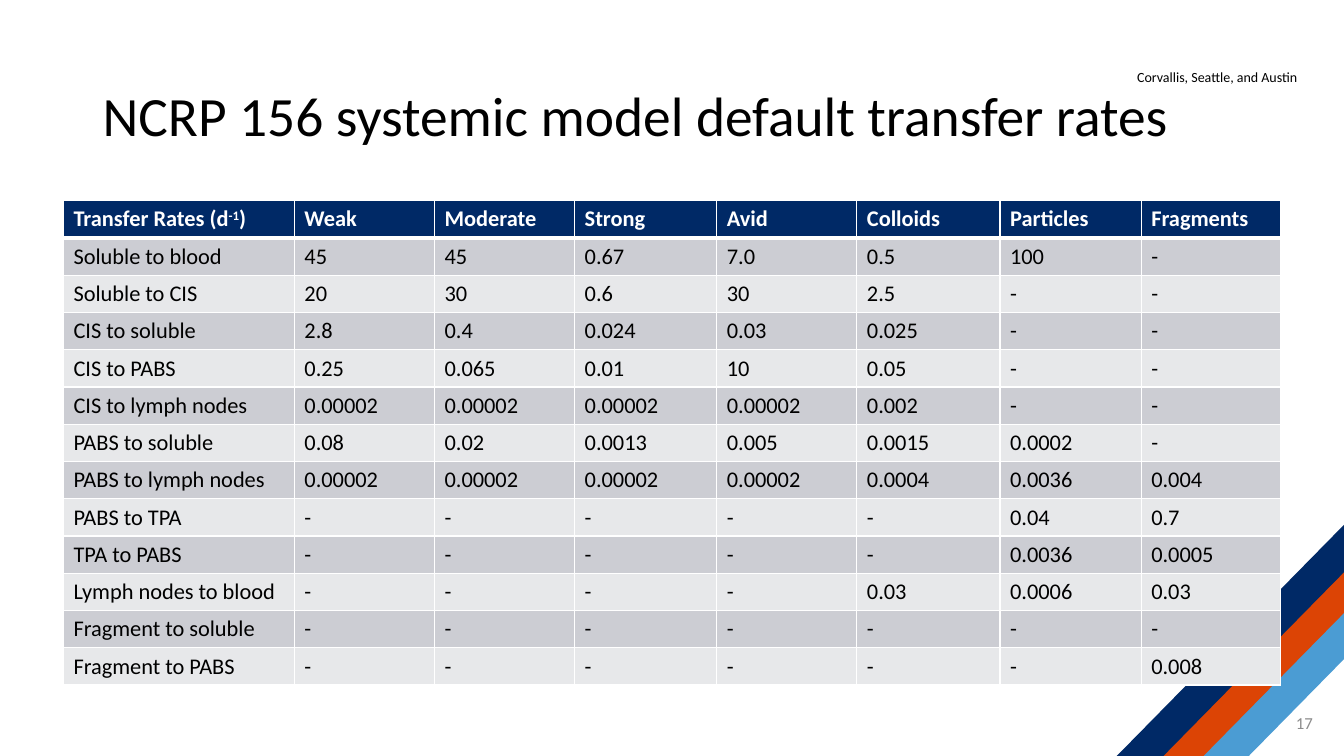
from lxml.etree import SubElement
from pptx import Presentation
from pptx.dml.color import RGBColor
from pptx.enum.shapes import MSO_SHAPE
from pptx.enum.text import MSO_ANCHOR, PP_ALIGN
from pptx.oxml.ns import qn
from pptx.util import Inches, Pt

FONT = "Calibri"
COLORS = {
    "navy": "002966",
    "orange": "DC4405",
    "sky": "4B9CD3",
    "dark band": "CCCDD3",
    "light band": "E7E8EA",
    "white": "FFFFFF",
    "black": "000000",
    "gray": "8C8C8C",
}
TITLE = "NCRP 156 systemic model default transfer rates"
LOCATIONS = "Corvallis, Seattle, and Austin"
PAGE_NUMBER = "17"

UNIT_HEADING = [("Transfer Rates (d", False), ("-1", True), (")", False)]
CATEGORIES = ["Weak", "Moderate", "Strong", "Avid", "Colloids", "Particles", "Fragments"]
RATES = [
    ("Soluble to blood", "45", "45", "0.67", "7.0", "0.5", "100", "-"),
    ("Soluble to CIS", "20", "30", "0.6", "30", "2.5", "-", "-"),
    ("CIS to soluble", "2.8", "0.4", "0.024", "0.03", "0.025", "-", "-"),
    ("CIS to PABS", "0.25", "0.065", "0.01", "10", "0.05", "-", "-"),
    ("CIS to lymph nodes", "0.00002", "0.00002", "0.00002", "0.00002", "0.002", "-", "-"),
    ("PABS to soluble", "0.08", "0.02", "0.0013", "0.005", "0.0015", "0.0002", "-"),
    ("PABS to lymph nodes", "0.00002", "0.00002", "0.00002", "0.00002", "0.0004", "0.0036", "0.004"),
    ("PABS to TPA", "-", "-", "-", "-", "-", "0.04", "0.7"),
    ("TPA to PABS", "-", "-", "-", "-", "-", "0.0036", "0.0005"),
    ("Lymph nodes to blood", "-", "-", "-", "-", "0.03", "0.0006", "0.03"),
    ("Fragment to soluble", "-", "-", "-", "-", "-", "-", "-"),
    ("Fragment to PABS", "-", "-", "-", "-", "-", "-", "0.008"),
]
COLUMN_WIDTHS = [2.29, 1.39, 1.39, 1.41, 1.39, 1.42, 1.4, 1.38]
ROW_HEIGHT = 0.37

STRIPES = [
    ("sky", 11.66, 6.75, 2.14),
    ("orange", 11.12, 6.48, 2.85),
    ("navy", 10.65, 6.3, 3.35),
]
STRIPE_THICKNESS = 0.33
STRIPE_ROTATION = 314.5


def rgb(color):
    return RGBColor.from_string(COLORS[color])


def style_paragraph(paragraph, size, color, bold=False):
    font = paragraph.font
    font.name = FONT
    font.size = Pt(size)
    font.bold = bold
    font.color.rgb = rgb(color)


def add_text(slide, text, box, size, color, wrap=True, anchor=MSO_ANCHOR.MIDDLE):
    shape = slide.shapes.add_textbox(*map(Inches, box))
    frame = shape.text_frame
    frame.word_wrap = wrap
    frame.vertical_anchor = anchor
    paragraph = frame.paragraphs[0]
    paragraph.text = text
    style_paragraph(paragraph, size, color)
    return paragraph


def add_stripe(slide, color, left, top, length):
    box = (left, top, length, STRIPE_THICKNESS)
    shape = slide.shapes.add_shape(MSO_SHAPE.RECTANGLE, *map(Inches, box))
    shape.rotation = STRIPE_ROTATION
    shape.shadow.inherit = False
    shape.fill.solid()
    shape.fill.fore_color.rgb = rgb(color)
    shape.line.fill.background()


def set_borders(cell, widths):
    properties = cell._tc.get_or_add_tcPr()
    for side, width in widths.items():
        line = SubElement(properties, qn(f"a:ln{side}"), w=str(Pt(width)))
        fill = SubElement(line, qn("a:solidFill"))
        SubElement(fill, qn("a:srgbClr"), val=COLORS["white"])


def fill_cell(cell, row, parts):
    set_borders(cell, {"L": 1, "R": 1, "T": 3 if row == 1 else 1, "B": 3 if row == 0 else 1})
    fill_color = "navy" if row == 0 else ("dark band" if row % 2 else "light band")
    cell.fill.solid()
    cell.fill.fore_color.rgb = rgb(fill_color)
    paragraph = cell.text_frame.paragraphs[0]
    for text, raised in parts:
        run = paragraph.add_run()
        run.text = text
        if raised:
            run._r.get_or_add_rPr().set("baseline", "30000")
    style_paragraph(paragraph, 16, "white" if row == 0 else "black", row == 0)


def add_rates_table(slide):
    rows = [[UNIT_HEADING] + [[(name, False)] for name in CATEGORIES]]
    rows += [[[(value, False)] for value in values] for values in RATES]
    box = (0.63, 1.99, sum(COLUMN_WIDTHS), ROW_HEIGHT * len(rows))
    table = slide.shapes.add_table(len(rows), len(COLUMN_WIDTHS), *map(Inches, box)).table
    table.first_row = False
    table.horz_banding = False
    for column, width in zip(table.columns, COLUMN_WIDTHS):
        column.width = Inches(width)
    for row, values in enumerate(rows):
        table.rows[row].height = Inches(ROW_HEIGHT)
        for column, parts in enumerate(values):
            fill_cell(table.cell(row, column), row, parts)


def main():
    presentation = Presentation()
    presentation.slide_width = Inches(13.33)
    presentation.slide_height = Inches(7.5)
    slide = presentation.slides.add_slide(presentation.slide_layouts[6])
    add_text(slide, LOCATIONS, (11.18, 0.63, 1.82, 0.27), 10, "black", False, MSO_ANCHOR.TOP)
    for stripe in STRIPES:
        add_stripe(slide, *stripe)
    title = add_text(slide, TITLE, (0.92, 0.63, 11.5, 1.1), 39.6, "black")
    title.line_spacing = 0.9
    number = add_text(slide, PAGE_NUMBER, (10.12, 6.97, 3, 0.4), 12, "gray")
    number.alignment = PP_ALIGN.RIGHT
    add_rates_table(slide)
    presentation.save("out.pptx")


if __name__ == "__main__":
    main()
